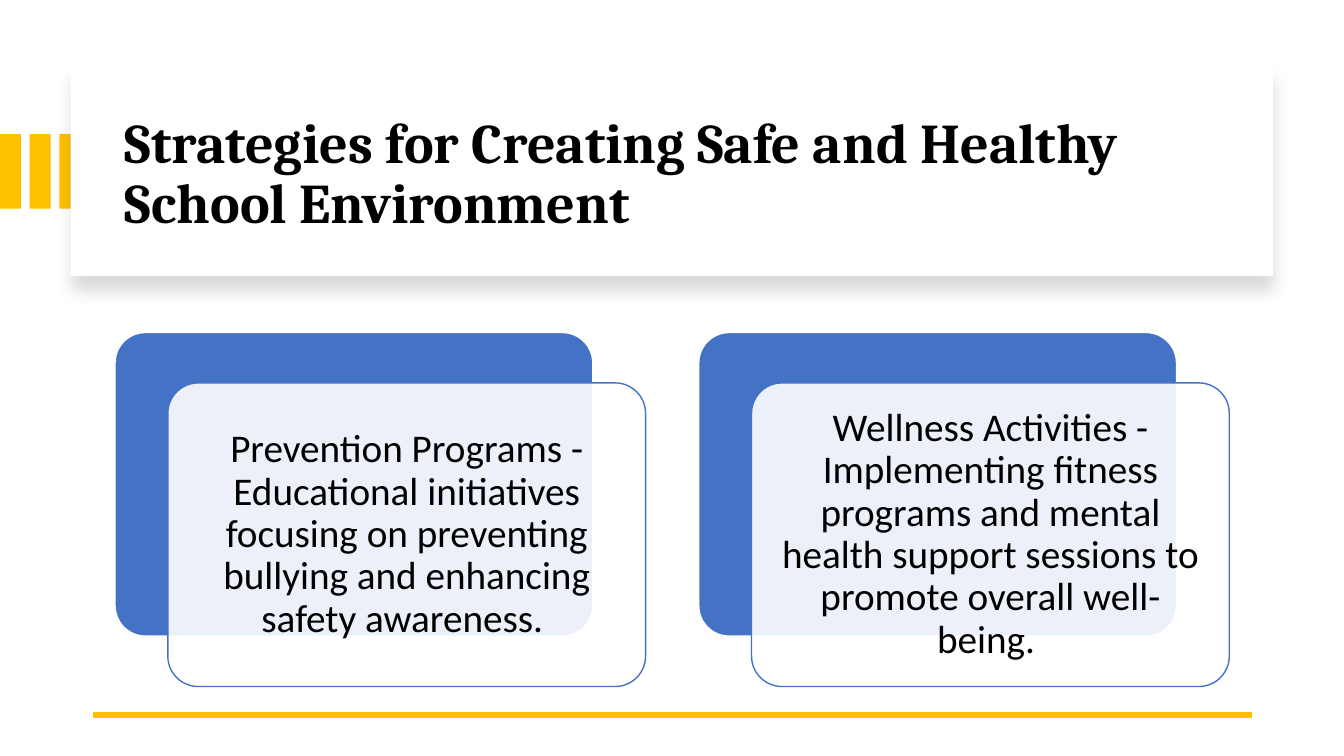
from lxml import etree
from pptx import Presentation
from pptx.dml.color import RGBColor
from pptx.enum import shapes, text
from pptx.oxml import ns
from pptx.util import Cm, Pt

GOLD = RGBColor(0xFF, 0xC0, 0x00)
BLUE = RGBColor(0x44, 0x72, 0xC4)
WHITE = RGBColor(0xFF, 0xFF, 0xFF)
BLACK = RGBColor(0x00, 0x00, 0x00)

TITLE = "Strategies for Creating Safe and Healthy School Environment"
STRATEGIES = [
    "Prevention Programs - Educational initiatives focusing on preventing "
    "bullying and enhancing safety awareness. ",
    "Wellness Activities - Implementing fitness programs and mental health "
    "support sessions to promote overall well-being. ",
]


def add_block(parent, kind, left, top, width, height, fill, line=None):
    sp = parent.add_shape(kind, Cm(left), Cm(top), Cm(width), Cm(height))
    sp.shadow.inherit = False
    sp.fill.solid()
    sp.fill.fore_color.rgb = fill
    if line is None:
        sp.line.fill.background()
    else:
        sp.line.color.rgb = line
        sp.line.width = Pt(1)
    return sp


def write_text(tf, content, size, font, bold=False, align=text.PP_ALIGN.LEFT,
               inset=0.25, space_after=0):
    tf.word_wrap = True
    tf.auto_size = text.MSO_AUTO_SIZE.NONE
    tf.vertical_anchor = text.MSO_ANCHOR.MIDDLE
    tf.margin_left = tf.margin_right = Cm(inset)
    tf.margin_top = tf.margin_bottom = Cm(min(inset, 0.3))
    p = tf.paragraphs[0]
    p.alignment = align
    p.line_spacing = 0.9
    p.space_after = Pt(space_after)
    r = p.add_run()
    r.text = content
    r.font.size = Pt(size)
    r.font.name = font
    r.font.bold = bold
    r.font.color.rgb = BLACK


def set_alpha(sp, percent):
    color = sp.element.spPr.find(ns.qn("a:solidFill"))[0]
    etree.SubElement(color, ns.qn("a:alpha"), val=str(percent * 1000))


def add_soft_shadow(sp):
    effects = sp.element.spPr.find(ns.qn("a:effectLst"))
    shadow = etree.SubElement(
        effects, ns.qn("a:outerShdw"), blurRad=str(Pt(11)), dist=str(Pt(10)),
        dir="5400000", algn="t", rotWithShape="0")
    color = etree.SubElement(shadow, ns.qn("a:srgbClr"), val=str(BLACK))
    etree.SubElement(color, ns.qn("a:alpha"), val="15000")


def add_stripes(slide, left, top, height, width=0.53, pitch=0.75, count=3):
    group = slide.shapes.add_group_shape()
    for i in range(count):
        add_block(group.shapes, shapes.MSO_SHAPE.RECTANGLE,
                  left + i * pitch, top, width, height, GOLD)


def add_banner(slide, left, top, width, height):
    panel = add_block(slide.shapes, shapes.MSO_SHAPE.RECTANGLE,
                      left, top, width, height, WHITE)
    add_soft_shadow(panel)
    title = slide.shapes.title
    title.left, title.top = Cm(left + 1.12), Cm(top + 0.56)
    title.width, title.height = Cm(width - 2.03), Cm(height - 0.94)
    write_text(title.text_frame, TITLE, 40, "Cambria", bold=True)
    panel.element.addnext(title.element)


def add_rule(slide, left, top, width):
    rule = slide.shapes.add_connector(
        shapes.MSO_CONNECTOR.STRAIGHT,
        Cm(left + width), Cm(top), Cm(left), Cm(top))
    rule.line.color.rgb = GOLD
    rule.line.width = Pt(4.5)
    etree.SubElement(rule.element.spPr, ns.qn("a:effectLst"))


def add_card(slide, content, left, top, width, height, dx=1.33, dy=1.27):
    group = slide.shapes.add_group_shape()
    size = width - dx, height - dy
    rounded = shapes.MSO_SHAPE.ROUNDED_RECTANGLE
    back = add_block(group.shapes, rounded, left, top, *size, BLUE, WHITE)
    front = add_block(group.shapes, rounded, left + dx, top + dy, *size,
                      WHITE, BLUE)
    for sp in (back, front):
        sp.adjustments[0] = 0.1
    set_alpha(front, 90)
    write_text(front.text_frame, content, 28, "Calibri",
               align=text.PP_ALIGN.CENTER, inset=0.3, space_after=9.8)


def add_cards(slide, left, top, width, height, gap=1.34):
    count = len(STRATEGIES)
    card_width = (width - gap * (count - 1)) / count
    for i, content in enumerate(STRATEGIES):
        add_card(slide, content, left + i * (card_width + gap), top,
                 card_width, height)


def main():
    prs = Presentation()
    prs.slide_width, prs.slide_height = Cm(33.87), Cm(19.05)
    slide = prs.slides.add_slide(prs.slide_layouts.get_by_name("Title Only"))
    add_stripes(slide, 0, 3.38, 1.88)
    add_banner(slide, 1.78, 1.7, 30.3, 5.26)
    add_rule(slide, 2.34, 18.01, 29.21)
    add_cards(slide, 2.9, 8.38, 28.08, 8.92)
    prs.save("out.pptx")


if __name__ == "__main__":
    main()
